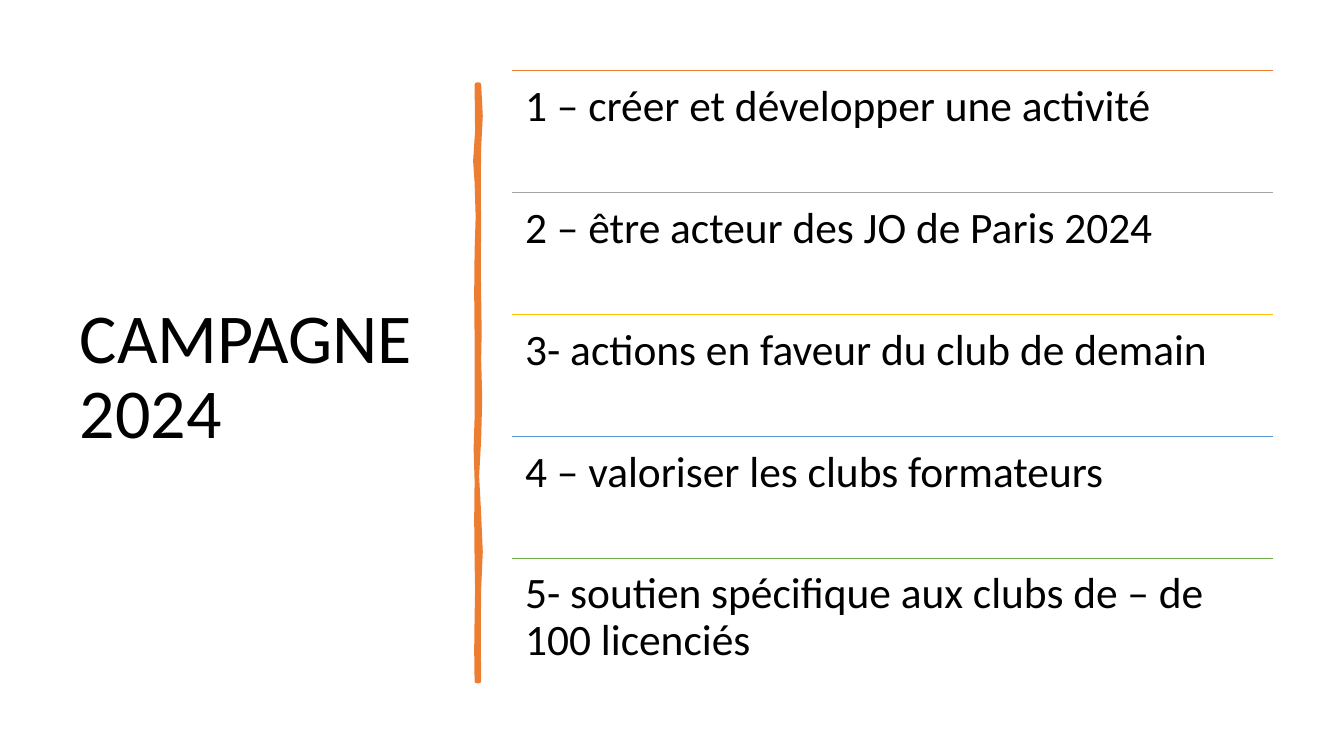
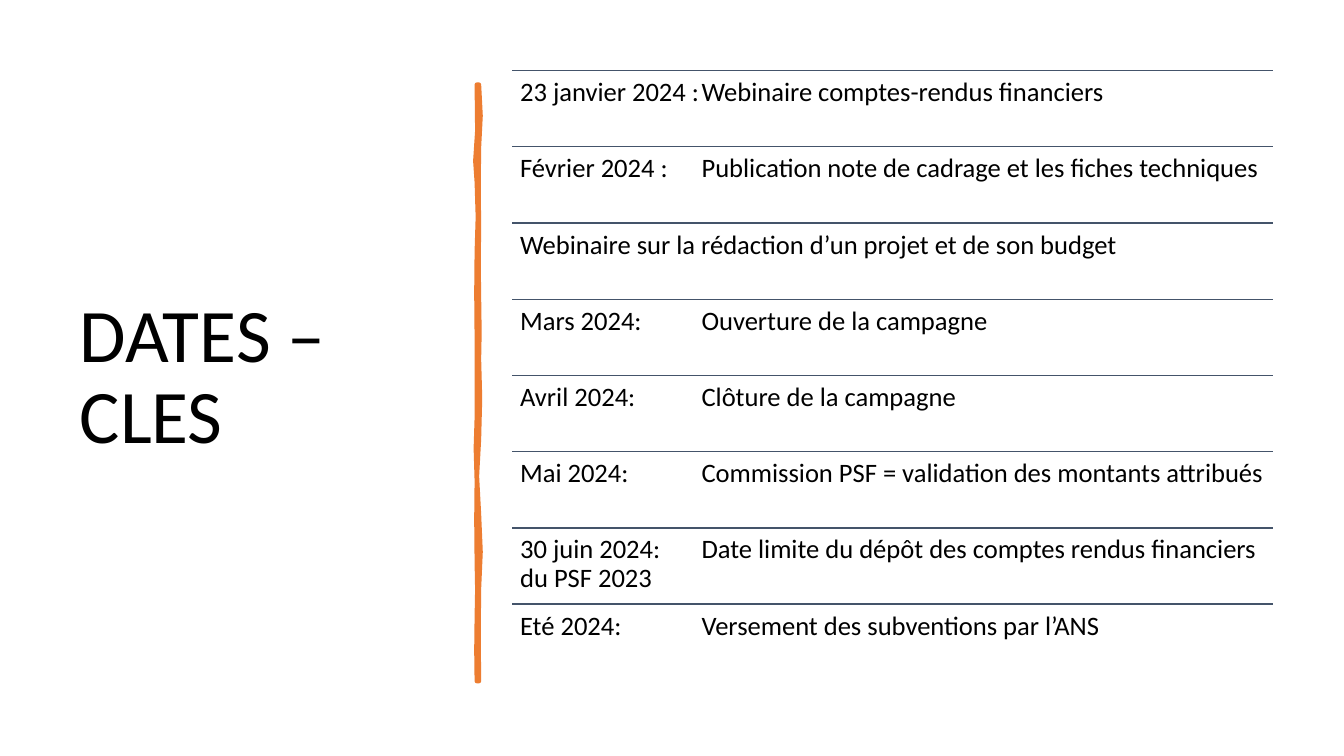
import pptx
import pptx.dml.color
import pptx.enum.shapes
import pptx.enum.text
import pptx.oxml
import pptx.oxml.ns
import pptx.util

COLORS = {
    "text": "000000",
    "orange": "ED7D31",
    "grey": "A5A5A5",
    "yellow": "FFC000",
    "blue": "5B9BD5",
    "green": "70AD47",
    "navy": "44546A",
}
FONT = "Calibri"

# Boxes are left, top, width, height in percent of the slide's size.
TITLE_BOX = (5.18, 9.33, 28.06, 81.47)
LIST_BOX = (38.1, 9.33, 56.64, 80.67)

# Outline of the brush stroke, down the right edge and up the left one.
BRUSH_RIGHT = [
    (35.63, 11.2), (35.75, 15.3), (35.63, 19.5), (35.6, 24.7), (35.63, 30.1),
    (35.6, 34.7), (35.63, 39.2), (35.67, 44), (35.63, 47.5), (35.71, 52.7),
    (35.63, 58.1), (35.48, 63), (35.63, 68), (35.75, 73), (35.63, 77.9),
    (35.6, 84), (35.63, 90.1),
]
BRUSH_LEFT = [
    (35.48, 90.1), (35.45, 86), (35.48, 81.7), (35.52, 78), (35.48, 74.3),
    (35.45, 68.7), (35.48, 63.6), (35.41, 59.3), (35.48, 55.3), (35.48, 50),
    (35.48, 44.7), (35.45, 38.7), (35.48, 33.3), (35.56, 28.7), (35.48, 24.1),
    (35.37, 21.3), (35.52, 17.3), (35.48, 11.2),
]


class Deck:
    """Holds the presentation, its style and the current slide."""

    def __init__(self):
        self.prs = pptx.Presentation()
        self.prs.slide_width = pptx.util.Inches(13.33)
        self.prs.slide_height = pptx.util.Inches(7.5)
        self.s = None

    def x(self, percent):
        return pptx.util.Emu(round(self.prs.slide_width * percent / 100))

    def y(self, percent):
        return pptx.util.Emu(round(self.prs.slide_height * percent / 100))

    def box(self, left, top, width, height):
        return self.x(left), self.y(top), self.x(width), self.y(height)

    def rgb(self, name):
        return pptx.dml.color.RGBColor.from_string(COLORS[name])

    def set_text(self, tf, text, size, anchor):
        tf.word_wrap = True
        tf.auto_size = pptx.enum.text.MSO_AUTO_SIZE.NONE
        tf.vertical_anchor = anchor
        p = tf.paragraphs[0]
        p.alignment = pptx.enum.text.PP_ALIGN.LEFT
        p.line_spacing = 0.9
        r = p.add_run()
        r.text = text
        r.font.name = FONT
        r.font.size = pptx.util.Pt(size)
        r.font.color.rgb = self.rgb("text")
        return p

    def add_slide(self, title, title_size):
        self.s = self.prs.slides.add_slide(self.prs.slide_layouts[5])
        sp = self.s.shapes.title
        sp.left, sp.top, sp.width, sp.height = self.box(*TITLE_BOX)
        self.set_text(sp.text_frame, title, title_size,
                      pptx.enum.text.MSO_ANCHOR.MIDDLE)
        self.add_brush()

    def add_brush(self):
        points = [(self.x(x), self.y(y)) for x, y in BRUSH_RIGHT + BRUSH_LEFT]
        outline = self.s.shapes.build_freeform(*points[0])
        outline.add_line_segments(points[1:], close=True)
        sp = outline.convert_to_shape()
        sp.shadow.inherit = False
        sp.fill.solid()
        sp.fill.fore_color.rgb = self.rgb("orange")
        sp.line.color.rgb = self.rgb("orange")
        sp.line.width = pptx.util.Pt(3.25)
        ln = sp._element.spPr.find(pptx.oxml.ns.qn("a:ln"))
        ln.append(self.element("a:round"))

    @staticmethod
    def element(tag, attributes=""):
        ns = pptx.oxml.ns.nsdecls("a")
        return pptx.oxml.parse_xml(f"<{tag} {ns} {attributes}/>")

    def add_rule(self, left, top, width, color):
        line = self.s.shapes.add_connector(
            pptx.enum.shapes.MSO_CONNECTOR.STRAIGHT,
            self.x(left), self.y(top), self.x(left + width), self.y(top))
        line.line.color.rgb = self.rgb(color)
        line.line.width = pptx.util.Pt(1)
        line._element.spPr.append(self.element("a:effectLst"))

    def add_entry(self, box, text, size, inset, tab):
        tf = self.s.shapes.add_textbox(*self.box(*box)).text_frame
        tf.margin_left = tf.margin_right = pptx.util.Inches(inset)
        tf.margin_top = tf.margin_bottom = pptx.util.Inches(inset)
        p = self.set_text(tf, text, size, pptx.enum.text.MSO_ANCHOR.TOP)
        if tab:
            tabs = self.element("a:tabLst")
            tabs.append(self.element("a:tab", f'pos="{self.x(tab)}" algn="l"'))
            p._p.get_or_add_pPr().append(tabs)

    def add_list(self, entries, size, inset, tab=None):
        """Stack (text, rule colour) entries in rows of equal height."""
        left, top, width, height = LIST_BOX
        row = height / len(entries)
        for i, (text, color) in enumerate(entries):
            row_top = top + i * row
            self.add_rule(left, row_top, width, color)
            self.add_entry((left, row_top, width, row), text, size, inset, tab)


def main():
    deck = Deck()

    deck.add_slide("CAMPAGNE 2024", 50)
    deck.add_list([
        ("1 – créer et développer une activité", "orange"),
        ("2 – être acteur des JO de Paris 2024", "grey"),
        ("3- actions en faveur du club de demain", "yellow"),
        ("4 – valoriser les clubs formateurs", "blue"),
        ("5- soutien spécifique aux clubs de – de 100 licenciés", "green"),
    ], size=31, inset=0.13)

    deck.add_slide("DATES – CLES", 54)
    dates = [
        "23 janvier 2024 :\tWebinaire comptes-rendus financiers",
        "Février 2024 :\tPublication note de cadrage et les fiches techniques",
        "Webinaire sur la rédaction d’un projet et de son budget",
        "Mars 2024:\tOuverture de la campagne",
        "Avril 2024:\tClôture de la campagne",
        "Mai 2024:\tCommission PSF = validation des montants attribués",
        "30 juin 2024:\tDate limite du dépôt des comptes rendus financiers "
        "du PSF 2023",
        "Eté 2024:\tVersement des subventions par l’ANS",
    ]
    deck.add_list([(text, "navy") for text in dates],
                  size=19, inset=0.08, tab=13.5)

    deck.prs.save("out.pptx")


if __name__ == "__main__":
    main()
